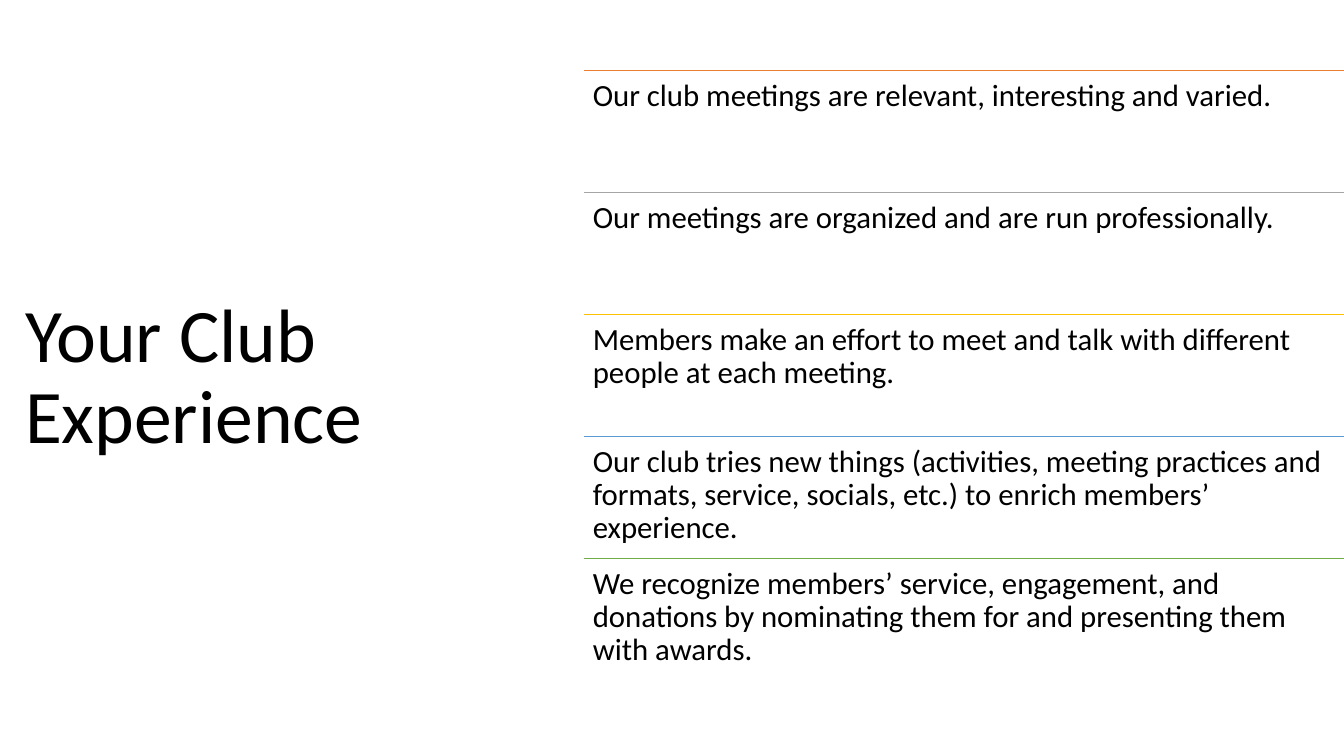
from lxml.etree import SubElement
from pptx import Presentation
from pptx.dml.color import RGBColor
from pptx.enum.shapes import MSO_CONNECTOR
from pptx.enum.text import MSO_ANCHOR, PP_ALIGN
from pptx.oxml.ns import qn
from pptx.util import Inches, Pt

TITLE = "Your Club Experience"
STATEMENTS = [
    ("Our club meetings are relevant, interesting and varied.", "ED7D31"),
    ("Our meetings are organized and are run professionally.", "A5A5A5"),
    ("Members make an effort to meet and talk with different people at each meeting.", "FFC000"),
    ("Our club tries new things (activities, meeting practices and formats, service, "
     "socials, etc.) to enrich members’ experience.", "5B9BD5"),
    ("We recognize members’ service, engagement, and donations by nominating them for "
     "and presenting them with awards.", "70AD47"),
]
SLIDE_WIDTH, SLIDE_HEIGHT = 13.33, 7.5
LIST_LEFT, LIST_TOP, ROW_HEIGHT = 5.79, 0.7, 1.21
LIST_WIDTH = SLIDE_WIDTH - LIST_LEFT
TITLE_FRAME = {"vertical_anchor": MSO_ANCHOR.MIDDLE}
STATEMENT_FRAME = {f"margin_{side}": Inches(0.09) for side in ("left", "top", "right", "bottom")}


def color(value):
    return RGBColor.from_string(value)


def set_format(target, values):
    for name, value in values.items():
        setattr(target, name, value)


def add_text(slide, text, box, size, frame_format):
    frame = slide.shapes.add_textbox(*map(Inches, box)).text_frame
    set_format(frame, {"word_wrap": True, **frame_format})
    paragraph = frame.paragraphs[0]
    paragraph.text = text
    set_format(paragraph, {"line_spacing": 0.9, "alignment": PP_ALIGN.LEFT})
    set_format(paragraph.font, {"name": "Calibri", "size": Pt(size)})
    paragraph.font.color.rgb = color("000000")


def add_rule(slide, top, line_color):
    ends = (LIST_LEFT, top, SLIDE_WIDTH, top)
    rule = slide.shapes.add_connector(MSO_CONNECTOR.STRAIGHT, *map(Inches, ends))
    rule.line.width = Pt(1)
    rule.line.color.rgb = color(line_color)
    SubElement(rule.element.spPr, qn("a:effectLst"))


def main():
    presentation = Presentation()
    set_format(presentation, {"slide_width": Inches(SLIDE_WIDTH),
                              "slide_height": Inches(SLIDE_HEIGHT)})
    slide = presentation.slides.add_slide(presentation.slide_layouts[6])
    add_text(slide, TITLE, (0.15, 0.7, 4.28, 6.11), 54, TITLE_FRAME)
    for row, (statement, line_color) in enumerate(STATEMENTS):
        top = LIST_TOP + row * ROW_HEIGHT
        add_rule(slide, top, line_color)
        add_text(slide, statement, (LIST_LEFT, top, LIST_WIDTH, ROW_HEIGHT), 22, STATEMENT_FRAME)
    presentation.save("out.pptx")


if __name__ == "__main__":
    main()
